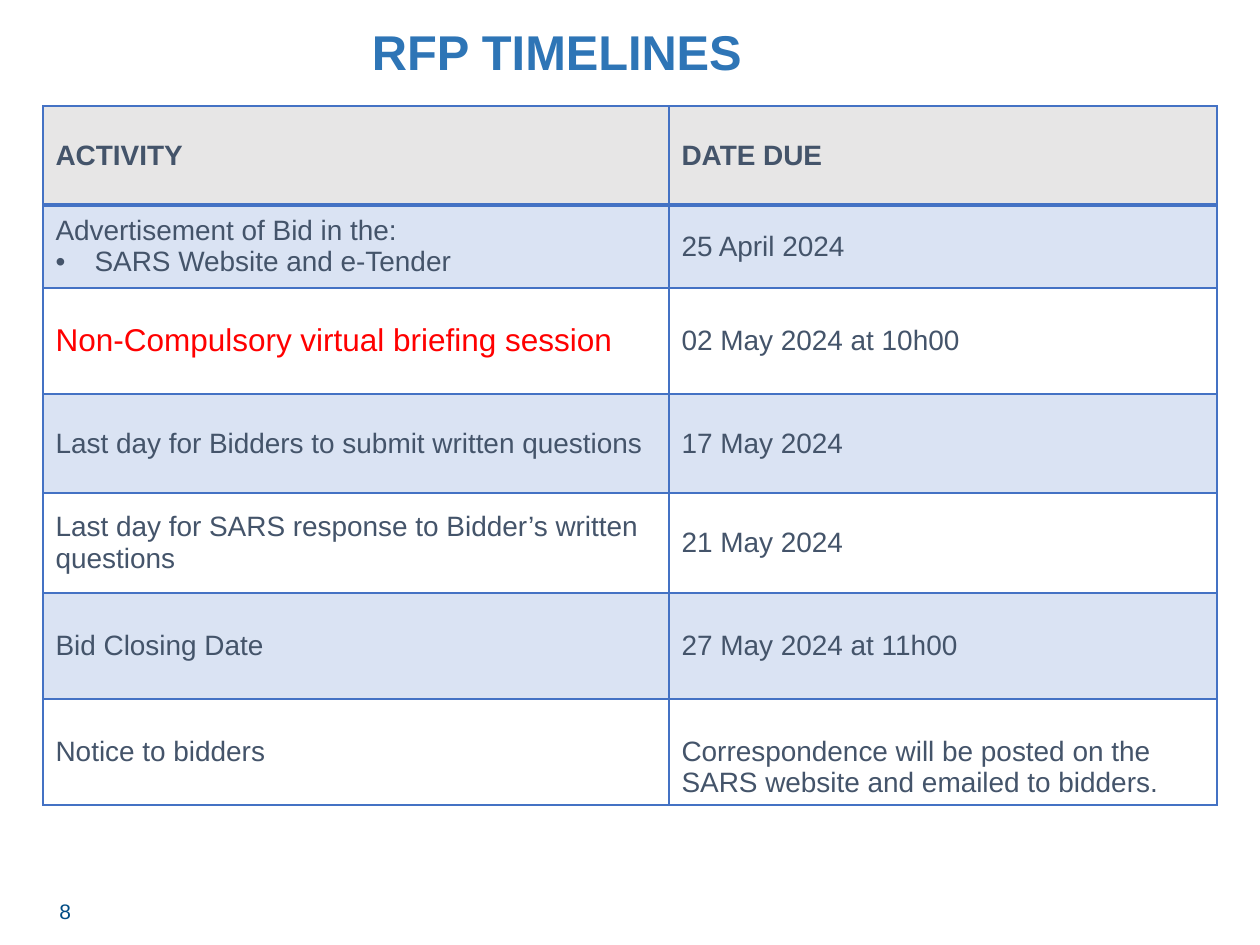
from lxml import etree
from pptx import Presentation
from pptx.dml.color import RGBColor
from pptx.enum.text import MSO_ANCHOR, PP_ALIGN
from pptx.oxml.ns import qn
from pptx.util import Emu, Pt

MID = MSO_ANCHOR.MIDDLE
LOW = MSO_ANCHOR.BOTTOM
TOP = MSO_ANCHOR.TOP
LEFT = PP_ALIGN.LEFT
MIDX = PP_ALIGN.CENTER

FONT = "Arial"
SLATE = "44546A"
BLUE = "4472C4"
GREY = "E7E6E6"
PALE = "DAE3F3"
RED = "FF0000"

COLS = [626, 548]
HEAD = (99, ["ACTIVITY"], ["DATE DUE"])
ROWS = [
    (83, ["Advertisement of Bid in the:", "SARS Website and e-Tender"],
     ["25 April 2024"]),
    (106, ["Non-Compulsory virtual briefing session"],
     ["02 May 2024 at 10h00"]),
    (99, ["Last day for Bidders to submit written questions"],
     ["17 May 2024"]),
    (100, ["Last day for SARS response to Bidder’s written questions"],
     ["21 May 2024"]),
    (106, ["Bid Closing Date"], ["27 May 2024 at 11h00"]),
    (106, ["Notice to bidders"],
     ["Correspondence will be posted on the SARS website "
      "and emailed to bidders."]),
]


def px(n):
    return Emu(round(n * 914400 / 126))


def color(code):
    return RGBColor.from_string(code)


def add_run(para, text, size, code, bold=False):
    run = para.add_run()
    run.text = text
    font = run.font
    font.name, font.size, font.bold = FONT, Pt(size), bold
    font.color.rgb = color(code)


def add_label(slide, box, text, size, code, bold, align, anchor):
    frame = slide.shapes.add_textbox(*map(px, box)).text_frame
    frame.word_wrap = True
    frame.vertical_anchor = anchor
    para = frame.paragraphs[0]
    para.alignment = align
    add_run(para, text, size, code, bold)


def add_bullet(para):
    props = para._p.get_or_add_pPr()
    props.set("marL", str(px(39)))
    props.set("indent", str(px(-39)))
    etree.SubElement(props, qn("a:buFont")).set("typeface", FONT)
    etree.SubElement(props, qn("a:buChar")).set("char", "•")


def add_edges(cell, top, low):
    props = cell._tc.get_or_add_tcPr()
    for side, width in (("L", 1), ("R", 1), ("T", top), ("B", low)):
        line = etree.SubElement(props, qn("a:ln" + side))
        line.set("w", str(Pt(width)))
        fill = etree.SubElement(line, qn("a:solidFill"))
        etree.SubElement(fill, qn("a:srgbClr")).set("val", BLUE)


def fill_cell(cell, lines, fill, size=16, code=SLATE, bold=False):
    cell.vertical_anchor = MID
    if fill:
        cell.fill.solid()
        cell.fill.fore_color.rgb = color(fill)
    else:
        cell.fill.background()
    frame = cell.text_frame
    for i, text in enumerate(lines):
        para = frame.add_paragraph() if i else frame.paragraphs[0]
        if i:
            add_bullet(para)
        add_run(para, text, size, code, bold)


def add_dates(slide, left, top):
    rows = [HEAD] + ROWS
    high = sum(row[0] for row in rows)
    frame = slide.shapes.add_table(
        len(rows), len(COLS), px(left), px(top), px(sum(COLS)), px(high))
    table = frame.table
    table.first_row = table.horz_banding = False
    for col, wide in zip(table.columns, COLS):
        col.width = px(wide)
    for r, (tall, *texts) in enumerate(rows):
        table.rows[r].height = px(tall)
        fill = PALE if r % 2 else None
        for c, lines in enumerate(texts):
            cell = table.cell(r, c)
            add_edges(cell, 2 if r == 1 else 1, 1 if r else 2)
            if r == 0:
                fill_cell(cell, lines, GREY, bold=True)
            elif (r, c) == (2, 0):
                fill_cell(cell, lines, fill, 18, RED)
            else:
                fill_cell(cell, lines, fill)
    table.cell(len(ROWS), 1).vertical_anchor = LOW


def main():
    deck = Presentation()
    deck.slide_width, deck.slide_height = px(1260), px(945)
    slide = deck.slides.add_slide(deck.slide_layouts[6])
    add_label(slide, (14, 16, 1086, 73), "RFP TIMELINES", 27.9, "2E75B6",
              True, MIDX, TOP)
    add_dates(slide, 43, 106)
    add_label(slide, (47, 886, 284, 50), "8", 12, "004C85",
              False, LEFT, MID)
    deck.save("out.pptx")


if __name__ == "__main__":
    main()
